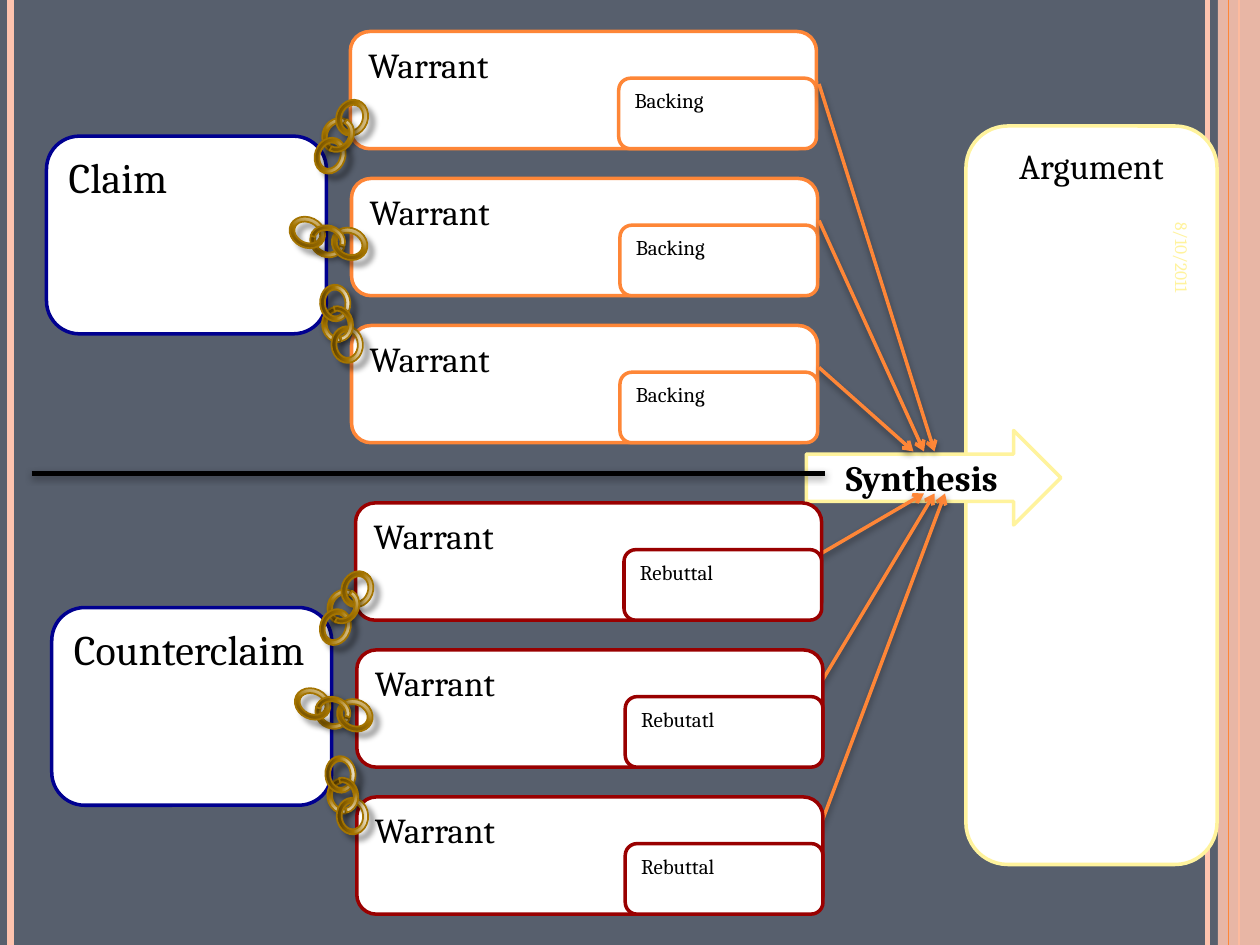
from copy import deepcopy

from lxml import etree
from pptx import Presentation
from pptx.dml.color import RGBColor
from pptx.enum import shapes, text
from pptx.oxml import ns
from pptx.util import Pt

COLORS = {
    "bg": "575F6D", "pink": "FEC3AE", "orange": "FE8637", "yellow": "FFF39D",
    "navy": "000090", "red": "990000", "white": "FFFFFF", "black": "000000",
    "bronze": "4D3500", "gold": "A47400",
}
FONT = "Cambria"
SHAPE = shapes.MSO_SHAPE
ALIGN = text.PP_ALIGN
ANCHOR = text.MSO_ANCHOR

RAILS = [(690, "pink", 3), (6, "pink", 4.5), (708, "orange", 1.5)]
SIDES = [
    ("Claim", "orange", ["Backing", "Backing", "Backing"], 0, 0),
    ("Counterclaim", "red", ["Rebuttal", "Rebutatl", "Rebuttal"], 3, 269.4),
]
WARRANT_X = [200.2, 200.9, 200.9]
WARRANT_TOP, WARRANT_STEP = 18, 84
CHAINS = [
    (356.4, False, (182.9, 176.4), (182.9, 162.7), (189.4, 186.5)),
    (20.1, True, (183.2, 68.4), (180, 78.5), (192.2, 56.9)),
    (295.5, False, (177.1, 128.9), (167, 122.4), (190.8, 128.9)),
]
UPPER_ARROWS = [((468, 48), (534, 258)), ((468, 126), (528, 258)), ((468, 210), (522, 258))]
LOWER_ARROWS = [((468, 474), (540, 282)), ((468, 392), (534, 282)), ((468, 317), (528, 282))]
ARC_ADJUST = [108, 0.27, 0.15]
RING_ADJUST = [0.16]


def rgb(name):
    return RGBColor.from_string(COLORS[name])


def child(parent, tag, **attrs):
    el = etree.SubElement(parent, ns.qn(tag))
    for key, value in attrs.items():
        el.set(key, str(value))
    return el


def add_effects(sp, shadow=None):
    effects = child(sp._element.spPr, "a:effectLst")
    if shadow:
        alpha, blur, dist, angle = shadow
        outer = child(effects, "a:outerShdw", blurRad=Pt(blur), dist=Pt(dist),
                      dir=angle * 60000, algn="ctr", rotWithShape=0)
        child(child(outer, "a:srgbClr", val=COLORS["black"]), "a:alpha", val=alpha * 1000)


def add_line(s, start, end, color, width, shadow=None, arrow=False):
    line = s.shapes.add_connector(shapes.MSO_CONNECTOR.STRAIGHT, *map(Pt, start + end))
    line.line.color.rgb = rgb(color)
    line.line.width = Pt(width)
    if arrow:
        child(line.line._get_or_add_ln(), "a:tailEnd", type="arrow")
    add_effects(line, shadow)


def add_arrows(s, arrows):
    for start, end in arrows:
        add_line(s, start, end, "orange", 2, (40, 4, 2, 90), True)


def style_text(tf, words, size, color="black", align=ALIGN.LEFT, anchor=ANCHOR.TOP, bold=False):
    tf.word_wrap = True
    tf.vertical_anchor = anchor
    p = tf.paragraphs[0]
    p.text = words
    p.alignment = align
    p.font.name, p.font.size, p.font.bold = FONT, Pt(size), bold
    p.font.color.rgb = rgb(color)


def add_box(s, kind, box, border, words, size, **style):
    sp = s.shapes.add_shape(kind, *map(Pt, box))
    sp.fill.solid()
    sp.fill.fore_color.rgb = rgb("white")
    sp.line.color.rgb = rgb(border)
    sp.line.width = Pt(2)
    sp.shadow.inherit = False
    style_text(sp.text_frame, words, size, **style)


def add_link(s, kind, box, angle, adjust, flip_h, flip_v, shadow):
    sp = s.shapes.add_shape(kind, *map(Pt, box))
    sp.rotation = angle % 360
    for i, value in enumerate(adjust):
        sp.adjustments[i] = value
    xfrm = sp._element.spPr.xfrm
    for key, on in (("flipH", flip_h), ("flipV", flip_v)):
        if on:
            xfrm.set(key, "1")
    sp.fill.gradient()
    sp.fill.gradient_angle = 0
    stops = sp._element.spPr.find(".//" + ns.qn("a:gsLst"))
    stops.append(deepcopy(stops[0]))
    for stop, pos, color in zip(sp.fill.gradient_stops, (0, 0.5, 1), ("bronze", "gold", "white")):
        stop.position = pos
        stop.color.rgb = rgb(color)
    sp.line.color.rgb = rgb("gold")
    sp.line.width = Pt(1)
    add_effects(sp, shadow)


def add_chain(s, chain, dx, dy):
    angle, flip, arc, first, second = chain
    turn = -1 if flip else 1
    arc_shadow, ring_shadow = (35, 3.1, 1.8, 45), (35, 3.1, 5, 45)
    arc_kind, ring_kind = SHAPE.BLOCK_ARC, SHAPE.DONUT
    pieces = [
        (arc_kind, arc, (20.2, 18), angle - 95.1 * turn, ARC_ADJUST, True, arc_shadow),
        (ring_kind, first, (17.3, 20.9), angle, RING_ADJUST, False, ring_shadow),
        (ring_kind, second, (18, 20.9), angle, RING_ADJUST, False, ring_shadow),
        (arc_kind, arc, (20.2, 17.3), angle + 80.6 * turn, ARC_ADJUST, False, arc_shadow),
    ]
    for kind, (x, y), size, rotation, adjust, flip_h, shadow in pieces:
        add_link(s, kind, (x + dx, y + dy, *size), rotation, adjust, flip_h, flip, shadow)


def add_side(s, claim, border, supports, dx, dy):
    rounded = SHAPE.ROUNDED_RECTANGLE
    add_box(s, rounded, (26.6 + dx, 77.8 + dy, 160, 113), "navy", claim, 24)
    for i, (x, support) in enumerate(zip(WARRANT_X, supports)):
        left, top = x + dx, WARRANT_TOP + i * WARRANT_STEP + dy
        add_box(s, rounded, (left, top, 266.4, 67), border, "Warrant", 20)
        add_box(s, rounded, (left + 153.4, top + 26.7, 113, 40.3), border, support, 12)
    for chain in CHAINS:
        add_chain(s, chain, dx, dy)


def add_frame(s):
    for x, color, width in RAILS:
        add_line(s, (x, 0), (x, 540), color, width)
    band = s.shapes.add_shape(SHAPE.RECTANGLE, *map(Pt, (696, 0, 24, 540)))
    band.fill.solid()
    band.fill.fore_color.rgb = rgb("pink")
    child(band._element.spPr.find(".//" + ns.qn("a:srgbClr")), "a:alpha", val=87000)
    band.line.fill.background()
    band.shadow.inherit = False
    add_line(s, (702, 0), (702, 540), "orange", 0.75)


def add_date(s):
    tb = s.shapes.add_textbox(*map(Pt, (635.4, 139.2, 80, 16)))
    tb.rotation = 90
    tf = tb.text_frame
    tf.margin_left = tf.margin_right = tf.margin_top = tf.margin_bottom = 0
    style_text(tf, "8/10/2011", 10, "yellow", ALIGN.CENTER, ANCHOR.MIDDLE)


def main():
    prs = Presentation()
    prs.slide_width, prs.slide_height = Pt(720), Pt(540)
    s = prs.slides.add_slide(prs.slide_layouts[6])
    s.background.fill.solid()
    s.background.fill.fore_color.rgb = rgb("bg")
    add_frame(s)
    add_box(s, SHAPE.ROUNDED_RECTANGLE, (552, 72, 143.5, 422), "yellow", "Argument", 20,
            align=ALIGN.CENTER)
    add_date(s)
    add_box(s, SHAPE.RIGHT_ARROW, (460.8, 246, 145.4, 54), "yellow", "Synthesis", 20.4,
            align=ALIGN.CENTER, anchor=ANCHOR.MIDDLE, bold=True)
    add_arrows(s, LOWER_ARROWS)
    add_line(s, (18, 270.5), (471.6, 270.5), "black", 2.75, (42, 4, 1.6, 90))
    for side in SIDES:
        add_side(s, *side)
    add_arrows(s, UPPER_ARROWS)
    prs.save("out.pptx")


if __name__ == "__main__":
    main()
